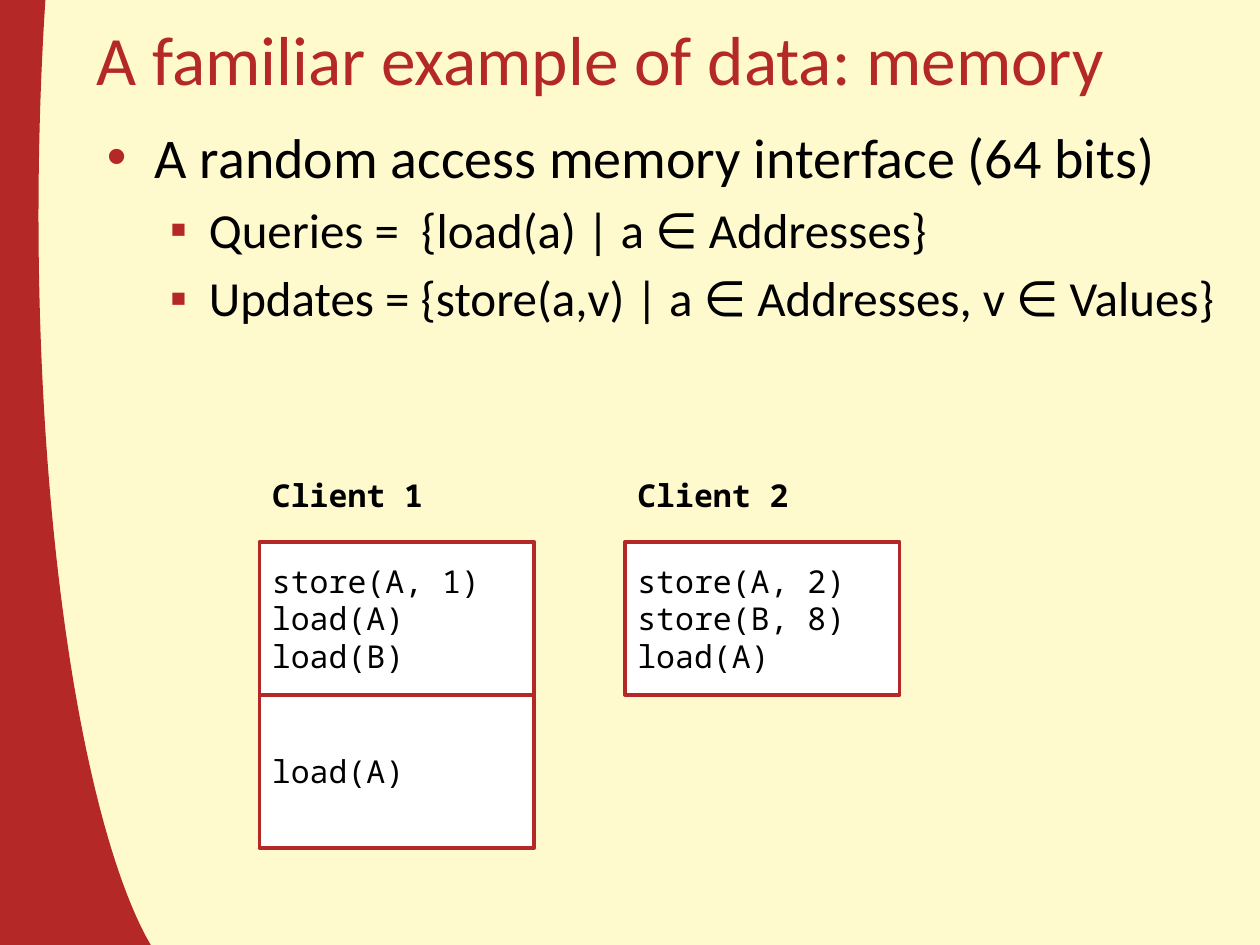
from collections import namedtuple

from lxml.etree import SubElement
from pptx import Presentation
from pptx.dml.color import RGBColor
from pptx.enum.shapes import MSO_SHAPE as Shape
from pptx.enum.text import MSO_ANCHOR as Anchor, PP_ALIGN as Align
from pptx.oxml.ns import qn
from pptx.util import Inches, Pt

COLORS = {"cream": "FFFACD", "red": "B42828", "black": "000000", "white": "FFFFFF"}
SANS, MONO = "Calibri", "Noto Sans Mono"
SLIDE_W, SLIDE_H = 10, 7.5

Box = namedtuple("Box", "left top width height")
Level = namedtuple("Level", "mark indent hang size")
LEVELS = [Level("•", 0.38, 0.38, 32), Level("▪", 0.81, 0.31, 28)]

POINTS = [
    (0, "A random access memory interface (64 bits)"),
    (1, "Queries =  {load(a) | a ∈ Addresses}"),
    (1, "Updates = {store(a,v) | a ∈ Addresses, v ∈ Values}"),
]
CLIENTS = [
    ("Client 1", [["store(A, 1)", "load(A)", "load(B)"], ["load(A)"]]),
    ("Client 2", [["store(A, 2)", "store(B, 8)", "load(A)"]]),
]


def rgb(name):
    return RGBColor.from_string(COLORS[name])


def place(box):
    return [Inches(length) for length in box]


def style(font, name, size, color="black", bold=False):
    font.name, font.size, font.bold = name, Pt(size), bold
    font.color.rgb = rgb(color)


def write(shape, lines, name, size, color="black", bold=False):
    frame = shape.text_frame
    frame.word_wrap = True
    frame.vertical_anchor = Anchor.MIDDLE
    frame.text = "\n".join(lines)
    for paragraph in frame.paragraphs:
        paragraph.alignment = Align.LEFT
        style(paragraph.font, name, size, color, bold)


def add_bullet(paragraph, level):
    props = paragraph._p.get_or_add_pPr()
    props.set("marL", str(Inches(level.indent)))
    props.set("indent", str(-Inches(level.hang)))
    color = SubElement(props, qn("a:buClr"))
    SubElement(color, qn("a:srgbClr"), val=COLORS["red"])
    SubElement(props, qn("a:buFont"), typeface="Arial")
    SubElement(props, qn("a:buChar"), char=level.mark)


def add_side_curve(slide, box):
    curve = slide.shapes.add_shape(Shape.ARC, *place(box))
    curve.shadow.inherit = False
    curve.adjustments[0], curve.adjustments[1] = 177.66, 55.34
    curve.element.spPr.find(qn("a:xfrm")).set("flipH", "1")
    curve.fill.background()
    curve.line.color.rgb = rgb("red")
    curve.line.width = Pt(80)


def add_title(slide, box):
    title = slide.shapes.add_textbox(*place(box))
    write(title, ["A familiar example of data: memory"], SANS, 39.6, "red")


def add_points(slide, box):
    frame = slide.shapes.add_textbox(*place(box)).text_frame
    frame.word_wrap = True
    for number, (depth, text) in enumerate(POINTS):
        level = LEVELS[depth]
        paragraph = frame.add_paragraph() if number else frame.paragraphs[0]
        paragraph.text = text
        paragraph.level = depth
        add_bullet(paragraph, level)
        if number:
            paragraph.space_before = Pt(level.size * 0.2)
        style(paragraph.font, SANS, level.size)


def add_client(slide, box, heading, blocks):
    heading_height = 0.74
    block_height = (box.height - heading_height) / 2
    label = slide.shapes.add_textbox(*place(box._replace(height=heading_height)))
    write(label, [heading], MONO, 18, bold=True)
    for row, calls in enumerate(blocks):
        top = box.top + heading_height + row * block_height
        block = slide.shapes.add_shape(
            Shape.RECTANGLE, *place(box._replace(top=top, height=block_height)))
        block.shadow.inherit = False
        block.fill.solid()
        block.fill.fore_color.rgb = rgb("white")
        block.line.color.rgb = rgb("red")
        block.line.width = Pt(2)
        write(block, calls, MONO, 18)


def add_clients(slide, box):
    gap = 0.72
    width = (box.width - gap) / len(CLIENTS)
    for column, (heading, blocks) in enumerate(CLIENTS):
        left = box.left + column * (width + gap)
        add_client(slide, box._replace(left=left, width=width), heading, blocks)


def main():
    deck = Presentation()
    deck.slide_width, deck.slide_height = Inches(SLIDE_W), Inches(SLIDE_H)
    slide = deck.slides.add_slide(deck.slide_layouts[6])
    slide.background.fill.solid()
    slide.background.fill.fore_color.rgb = rgb("cream")
    add_side_curve(slide, Box(-0.25, -4.83, 3.08, 13.08))
    add_title(slide, Box(0.67, -0.17, 0.9 * SLIDE_W, SLIDE_H / 6))
    add_points(slide, Box(0.75, 0.92, 0.9 * SLIDE_W, 5.83))
    add_clients(slide, Box(2.06, 3.56, 5.08, 3.17))
    deck.save("out.pptx")


if __name__ == "__main__":
    main()
